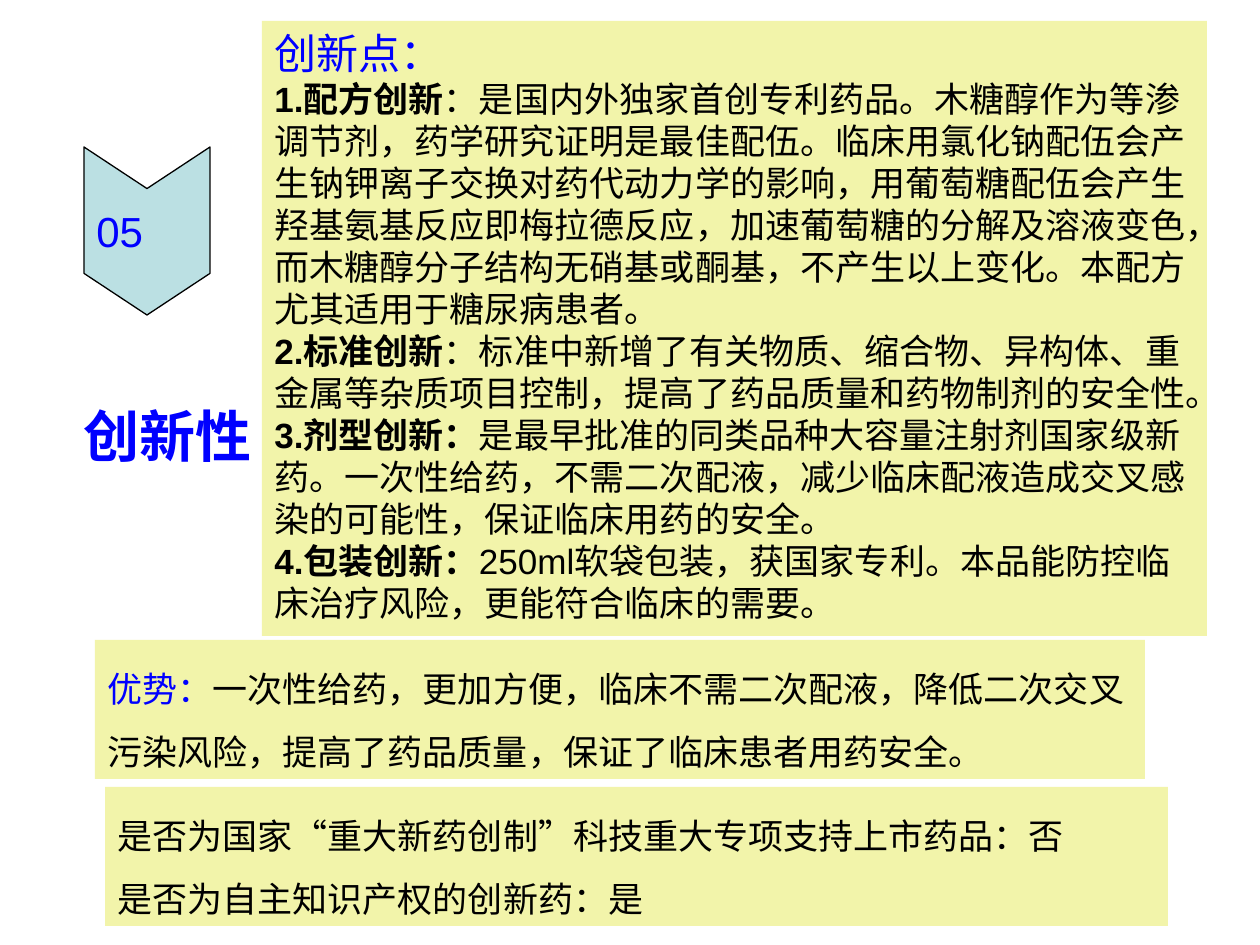
from pptx import Presentation
from pptx.dml.color import RGBColor
from pptx.enum.shapes import MSO_SHAPE as Shape
from pptx.enum.text import MSO_ANCHOR as Anchor, MSO_AUTO_SIZE as AutoSize, PP_ALIGN as Align
from pptx.util import Emu, Pt

BLUE, BLACK, CREAM, TEAL = "0000FF", "000000", "F2F4AA", "BBE0E3"


def px(*lengths):
    return [Emu(round(length * 914400 / 126)) for length in lengths]


def style(span, size, color, bold=False):
    span.font.name = "Arial"
    span.font.size = Pt(size)
    span.font.bold = bold
    span.font.color.rgb = RGBColor.from_string(color)


deck = Presentation()
deck.slide_width, deck.slide_height = px(1260, 945)
page = deck.slides.add_slide(deck.slide_layouts[5])

title = page.shapes.title
title.left, title.top, title.width, title.height = px(42, 388, 252, 95)
title.text_frame.text = "创新性"
title.text_frame.auto_size = AutoSize.NONE
title.text_frame.vertical_anchor = Anchor.MIDDLE
title.text_frame.paragraphs[0].alignment = Align.CENTER
style(title.text_frame.paragraphs[0].runs[0], 32, BLUE, True)

chevron = page.shapes.add_shape(Shape.CHEVRON, *px(63, 168, 168, 126))
chevron.rotation = 90
chevron.adjustments[0] = 0.33
chevron.shadow.inherit = False
chevron.fill.solid()
chevron.fill.fore_color.rgb = RGBColor.from_string(TEAL)
chevron.line.color.rgb = RGBColor.from_string(BLACK)
chevron.line.width = Pt(0.75)
number = chevron.text_frame
number.text = "05"
number.word_wrap = False
number.vertical_anchor = Anchor.MIDDLE
number.paragraphs[0].alignment = Align.CENTER
style(number.paragraphs[0].runs[0], 24, BLUE)
body = number._txBody.bodyPr
body.set("vert", "eaVert")
body.set("rot", "10800000")

advantage = [
    [("优势：", 20, BLUE, False),
     ("一次性给药，更加方便，临床不需二次配液，降低二次交叉污染风险，提高了药品质量，保证了临床患者用药安全。", 20, BLACK, False)],
]
status = [
    [("是否为国家“重大新药创制”科技重大专项支持上市药品：否", 20, BLACK, False)],
    [("是否为自主知识产权的创新药：是", 20, BLACK, False)],
]
points = [
    ("1.配方创新", "：是国内外独家首创专利药品。木糖醇作为等渗调节剂，药学研究证明是最佳配伍。"
     "临床用氯化钠配伍会产生钠钾离子交换对药代动力学的影响，用葡萄糖配伍会产生羟基氨基反应即梅拉德反应，"
     "加速葡萄糖的分解及溶液变色，而木糖醇分子结构无硝基或酮基，不产生以上变化。本配方尤其适用于糖尿病患者。"),
    ("2.标准创新", "：标准中新增了有关物质、缩合物、异构体、重金属等杂质项目控制，提高了药品质量和药物制剂的安全性。"),
    ("3.剂型创新：", "是最早批准的同类品种大容量注射剂国家级新药。一次性给药，不需二次配液，"
     "减少临床配液造成交叉感染的可能性，保证临床用药的安全。"),
    ("4.包装创新：", "250ml软袋包装，获国家专利。本品能防控临床治疗风险，更能符合临床的需要。"),
]
innovation = [[("创新点：", 24, BLUE, False)]]
for heading, detail in points:
    innovation.append([(heading, 20, BLACK, True), (detail, 20, BLACK, False)])

panels = [
    ((95, 640, 1050, 139), 1.5, advantage),
    ((105, 787, 1063, 139), 1.5, status),
    ((262, 21, 945, 615), 1.0, innovation),
]
for bounds, spacing, paragraphs in panels:
    box = page.shapes.add_textbox(*px(*bounds))
    box.fill.solid()
    box.fill.fore_color.rgb = RGBColor.from_string(CREAM)
    frame = box.text_frame
    frame.word_wrap = True
    frame.auto_size = AutoSize.SHAPE_TO_FIT_TEXT
    for index, spans in enumerate(paragraphs):
        para = frame.add_paragraph() if index else frame.paragraphs[0]
        para.line_spacing = spacing
        for text, size, color, bold in spans:
            span = para.add_run()
            span.text = text
            style(span, size, color, bold)

deck.save("out.pptx")
